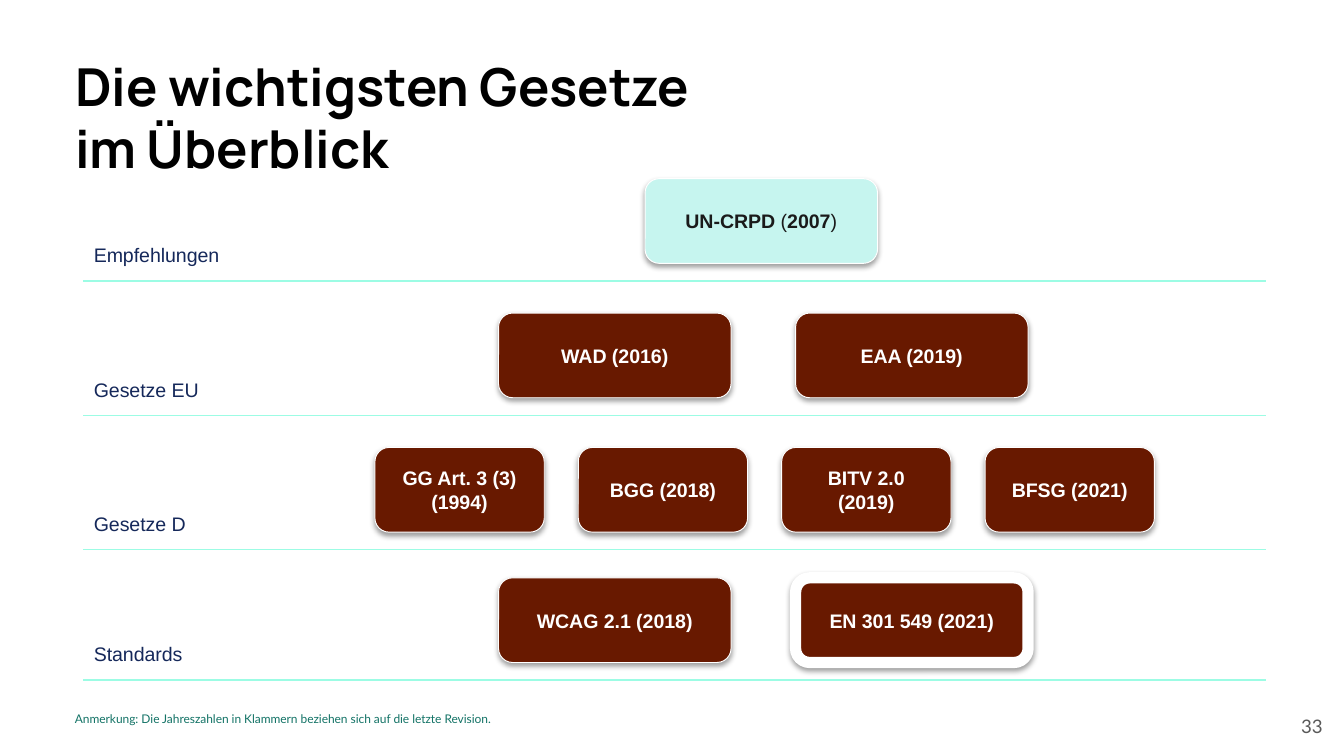
from lxml.etree import SubElement
from pptx import Presentation
from pptx.dml.color import RGBColor
from pptx.enum.shapes import MSO_CONNECTOR, MSO_SHAPE
from pptx.enum.text import MSO_ANCHOR, PP_ALIGN
from pptx.oxml.ns import qn
from pptx.util import Inches, Pt

BLACK = RGBColor(0x00, 0x00, 0x00)
WHITE = RGBColor(0xFF, 0xFF, 0xFF)
INK = RGBColor(0x1A, 0x1A, 0x1A)
NAVY = RGBColor(0x15, 0x28, 0x5A)
MINT = RGBColor(0x9C, 0xFC, 0xE4)
PALE_MINT = RGBColor(0xC6, 0xF5, 0xEF)
BROWN = RGBColor(0x68, 0x19, 0x00)
GREEN = RGBColor(0x13, 0x73, 0x66)
GREY = RGBColor(0x59, 0x59, 0x59)

# Content
TITLE = "Die wichtigsten Gesetze \nim Überblick"
NOTE = "Anmerkung: Die Jahreszahlen in Klammern beziehen sich auf die letzte Revision."
PAGE_NUMBER = "33"

# Each card is a list of (text, bold) spans; first and last are left edges
LEVELS = [
    {"label": "Empfehlungen", "rule": 2.09, "first": 4.8, "last": 4.8, "width": 1.73,
     "fill": PALE_MINT, "ink": INK,
     "cards": [[("UN-CRPD", True), (" (", False), ("2007", True), (")", False)]]},
    {"label": "Gesetze EU", "rule": 3.09, "first": 3.71, "last": 5.92, "width": 1.73,
     "fill": BROWN, "ink": WHITE,
     "cards": [[("WAD (2016)", True)], [("EAA (2019)", True)]]},
    {"label": "Gesetze D", "rule": 4.09, "first": 2.79, "last": 7.33, "width": 1.26,
     "fill": BROWN, "ink": WHITE,
     "cards": [[("GG Art. 3 (3) (1994)", True)], [("BGG (2018)", True)],
               [("BITV 2.0 (2019)", True)], [("BFSG (2021)", True)]]},
    {"label": "Standards", "rule": 5.06, "first": 3.71, "last": 5.92, "width": 1.73,
     "fill": BROWN, "ink": WHITE,
     "cards": [[("WCAG 2.1 (2018)", True)], [("EN 301 549 (2021)", True)]]},
]
HIGHLIGHTED = "EN 301 549 (2021)"

# Grid, in inches
RULE_LEFT, RULE_RIGHT = 0.62, 9.42
LABEL_LEFT, LABEL_RISE = 0.6, 0.33
CARD_HEIGHT, CARD_RISE = 0.63, 0.76


def set_font(font, name, size, color, bold=False):
    font.name, font.size, font.bold = name, Pt(size), bold
    font.color.rgb = color


def add_text(page, place, text, name, size, color, bold=False, insets=(0.1, 0.1),
             anchor=MSO_ANCHOR.TOP, align=PP_ALIGN.LEFT, spacing=None):
    frame = page.shapes.add_textbox(*map(Inches, place)).text_frame
    frame.word_wrap = True
    frame.vertical_anchor = anchor
    frame.margin_top, frame.margin_bottom = map(Inches, insets)
    paragraph = frame.paragraphs[0]
    paragraph.text = text
    paragraph.alignment = align
    paragraph.line_spacing = spacing
    set_font(paragraph.font, name, size, color, bold)


def add_rule(page, height):
    rule = page.shapes.add_connector(
        MSO_CONNECTOR.STRAIGHT, Inches(RULE_LEFT), Inches(height),
        Inches(RULE_RIGHT), Inches(height))
    rule.line.color.rgb = MINT
    rule.line.width = Pt(0.75)
    SubElement(rule._element.spPr, qn("a:effectLst"))


def add_shadow(card):
    card.shadow.inherit = False
    effects = card._element.spPr.find(qn("a:effectLst"))
    shadow = SubElement(effects, qn("a:outerShdw"), blurRad=str(Pt(3.1)),
                        dist=str(Pt(1.6)), dir="5400000", rotWithShape="0")
    color = SubElement(shadow, qn("a:srgbClr"), val=str(BLACK))
    SubElement(color, qn("a:alpha"), val="38000")


def add_card(page, left, top, level, spans):
    card = page.shapes.add_shape(
        MSO_SHAPE.ROUNDED_RECTANGLE, Inches(left), Inches(top),
        Inches(level["width"]), Inches(CARD_HEIGHT))
    card.fill.solid()
    card.fill.fore_color.rgb = level["fill"]
    card.line.color.rgb = WHITE
    card.line.width = Pt(6 if spans[0][0] == HIGHLIGHTED else 0.5)
    add_shadow(card)
    frame = card.text_frame
    frame.word_wrap = True
    frame.vertical_anchor = MSO_ANCHOR.MIDDLE
    paragraph = frame.paragraphs[0]
    paragraph.alignment = PP_ALIGN.CENTER
    for text, bold in spans:
        span = paragraph.add_run()
        span.text = text
        set_font(span.font, "Arial", 10.5, level["ink"], bold)


def add_level(page, level):
    add_rule(page, level["rule"])
    add_text(page, (LABEL_LEFT, level["rule"] - LABEL_RISE, 1.73, 0.28),
             level["label"], "Arial", 10.5, NAVY, insets=(0.05, 0.05))
    # Cards stand at equal steps from the first to the last
    pitch = (level["last"] - level["first"]) / max(len(level["cards"]) - 1, 1)
    for column, spans in enumerate(level["cards"]):
        add_card(page, level["first"] + column * pitch, level["rule"] - CARD_RISE, level, spans)


def main():
    deck = Presentation()
    deck.slide_width = Inches(10)
    deck.slide_height = deck.slide_width * 9 // 16
    page = deck.slides.add_slide(deck.slide_layouts[6])

    # Title
    add_text(page, (0.46, 0.3, 6.95, 0.82), TITLE, "Manrope", 28, BLACK, bold=True)

    # Levels of regulation
    for level in LEVELS:
        add_level(page, level)

    # Note and page number
    add_text(page, (0.46, 5.24, 9.07, 0.31), NOTE, "Lato", 6.4, GREEN,
             insets=(0.05, 0.15), anchor=MSO_ANCHOR.BOTTOM, spacing=0.95)
    add_text(page, (9.34, 5.19, 0.6, 0.43), PAGE_NUMBER, "Lato", 10, GREY,
             anchor=MSO_ANCHOR.MIDDLE, align=PP_ALIGN.RIGHT)

    deck.save("out.pptx")


if __name__ == "__main__":
    main()
